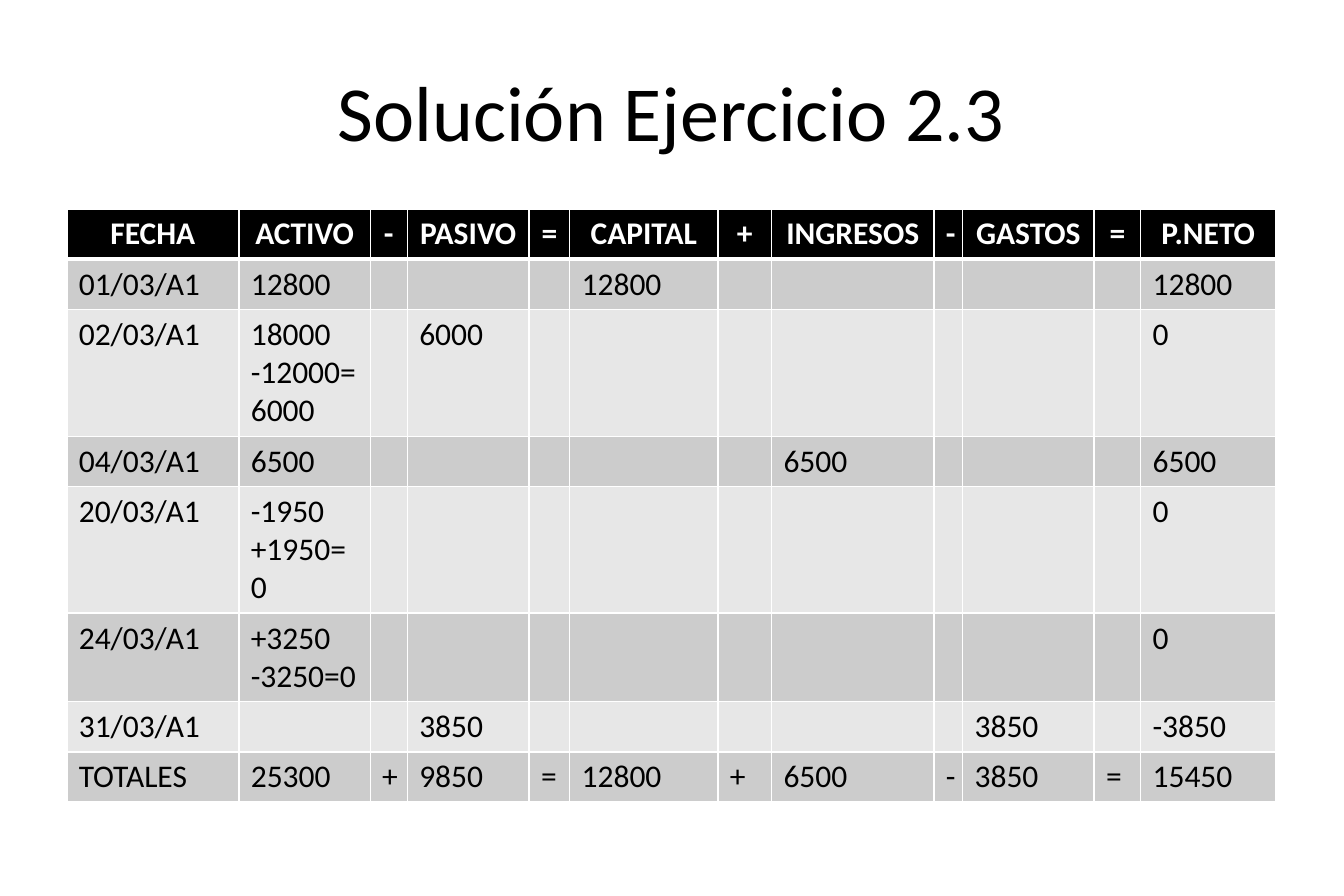
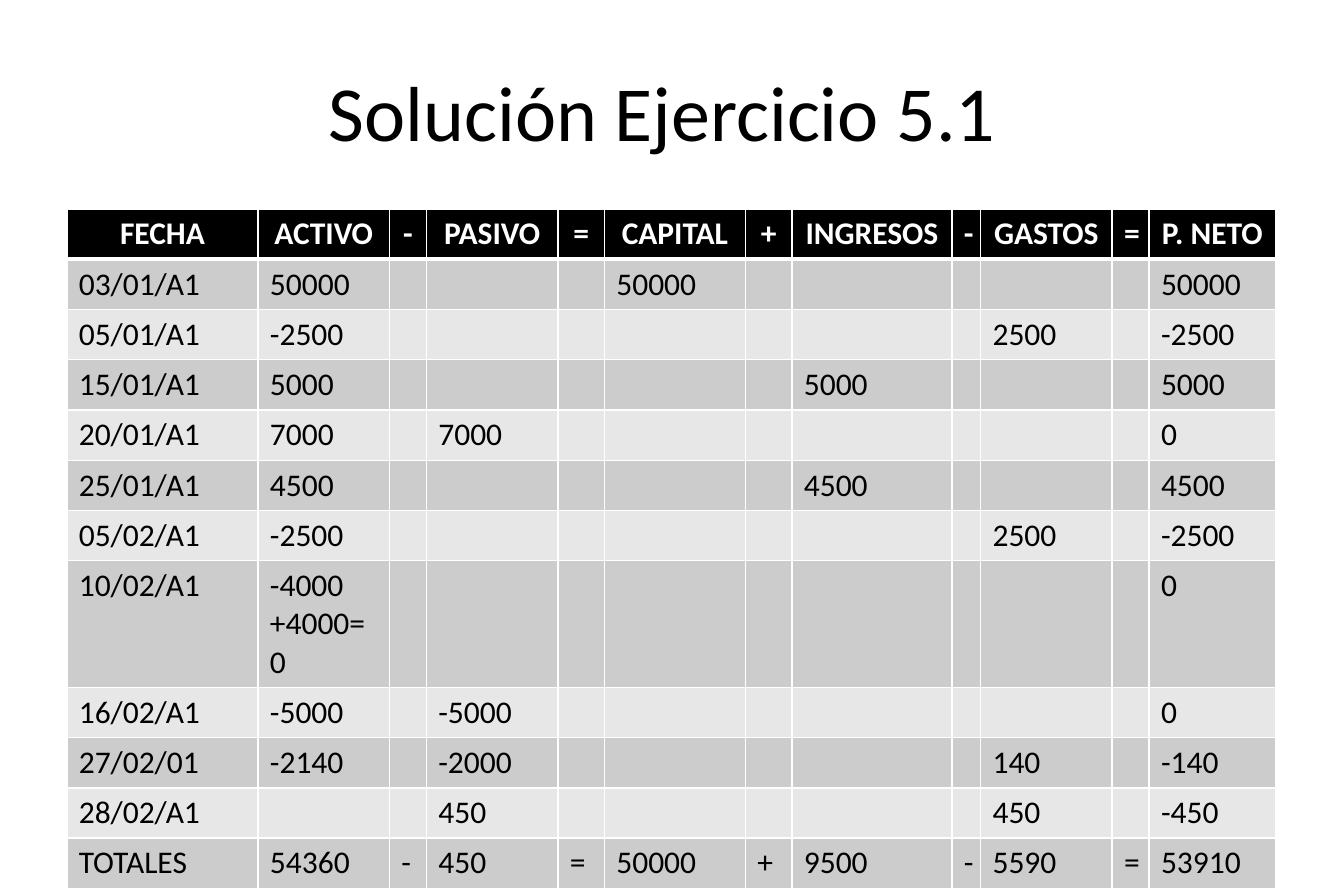
import pptx
import pptx.util
import pptx.dml.color
import pptx.enum.text
import pptx.oxml.ns
import lxml.etree

PX = 9144
FONT = "Calibri"
HUES = {"ink": "000000", "paper": "FFFFFF", "dark": "CCCCCC", "light": "E7E7E7"}
HEAD_BOX = (56, 30, 1012, 125)
GRID_BOX = (56, 175, 1012)
ROW = 41
LEFT = pptx.enum.text.PP_ALIGN.LEFT
MID = pptx.enum.text.PP_ALIGN.CENTER

HEADS = ["FECHA", "ACTIVO", "PASIVO", "CAPITAL", "INGRESOS", "GASTOS"]
DECK = [
    {
        "title": "Solución Ejercicio 2.3",
        "cols": [144, 110, 31, 102, 34, 124, 45, 136, 24, 110, 39, 113],
        "neto": "P.NETO",
        "rows": [
            ["01/03/A1", "12800", "", "12800", "", "", "12800"],
            ["02/03/A1", "18000\n-12000=\n6000", "6000", "", "", "", "0"],
            ["04/03/A1", "6500", "", "", "6500", "", "6500"],
            ["20/03/A1", "-1950\n+1950=0", "", "", "", "", "0"],
            ["24/03/A1", "+3250\n-3250=0", "", "", "", "", "0"],
            ["31/03/A1", "", "3850", "", "", "3850", "-3850"],
        ],
        "total": ["TOTALES", "25300", "9850", "12800", "6500", "3850", "15450"],
        "signs": "+=+-=",
    },
    {
        "title": "Solución Ejercicio 5.1 ",
        "cols": [160, 110, 31, 110, 39, 118, 39, 134, 24, 110, 31, 106],
        "neto": "P. NETO",
        "rows": [
            ["03/01/A1", "50000", "", "50000", "", "", "50000"],
            ["05/01/A1", "-2500", "", "", "", "2500", "-2500"],
            ["15/01/A1", "5000", "", "", "5000", "", "5000"],
            ["20/01/A1", "7000", "7000", "", "", "", "0"],
            ["25/01/A1", "4500", "", "", "4500", "", "4500"],
            ["05/02/A1", "-2500", "", "", "", "2500", "-2500"],
            ["10/02/A1", "-4000\n+4000=0", "", "", "", "", "0"],
            ["16/02/A1", "-5000", "-5000", "", "", "", "0"],
            ["27/02/01", "-2140", "-2000", "", "", "140", "-140"],
            ["28/02/A1", "", "450", "", "", "450", "-450"],
        ],
        "total": ["TOTALES", "54360", "450", "50000", "9500", "5590", "53910"],
        "signs": "-=+-=",
    },
]


def tint(name):
    return pptx.dml.color.RGBColor.from_string(HUES[name])


def write(frame, text, size=19, hue="ink", bold=False, align=LEFT):
    frame.text = text
    for para in frame.paragraphs:
        para.alignment = align
        for run in para.runs:
            run.font.name = FONT
            run.font.size = pptx.util.Pt(size)
            run.font.bold = bold
            run.font.color.rgb = tint(hue)


def edge(cell, side, width):
    qn = pptx.oxml.ns.qn
    line = lxml.etree.SubElement(
        cell._tc.get_or_add_tcPr(), qn("a:ln" + side), w=str(pptx.util.Pt(width))
    )
    fill = lxml.etree.SubElement(line, qn("a:solidFill"))
    lxml.etree.SubElement(fill, qn("a:srgbClr"), val=HUES["paper"])


def weave(vals, signs):
    line = list(vals[:2])
    for sign, val in zip(signs, vals[2:]):
        line += [sign, val]
    return line


def add_head(slide, box, text):
    head = slide.shapes.title
    head.left, head.top, head.width, head.height = [n * PX for n in box]
    frame = head.text_frame
    frame.auto_size = pptx.enum.text.MSO_AUTO_SIZE.NONE
    frame.vertical_anchor = pptx.enum.text.MSO_ANCHOR.MIDDLE
    frame.margin_left = frame.margin_right = 11 * PX
    frame.margin_top = frame.margin_bottom = 5 * PX
    write(frame, text, size=47, align=MID)


def add_grid(slide, box, cols, lines):
    x, y, width = box
    frame = slide.shapes.add_table(
        len(lines), len(cols), x * PX, y * PX, width * PX, len(lines) * ROW * PX
    )
    table = frame.table
    table.first_row = table.horz_banding = False
    for col, wide in zip(table.columns, cols):
        col.width = wide * PX
    for r, line in enumerate(lines):
        table.rows[r].height = ROW * PX
        top = r == 0
        hue = "ink" if top else "dark" if r % 2 else "light"
        for c, text in enumerate(line):
            cell = table.cell(r, c)
            for side in "LRTB":
                thick = (r, side) in ((0, "B"), (1, "T"))
                edge(cell, side, 3 if thick else 1)
            cell.fill.solid()
            cell.fill.fore_color.rgb = tint(hue)
            if text and top:
                write(cell.text_frame, text, hue="paper", bold=True, align=MID)
            elif text:
                write(cell.text_frame, text)


def add_page(deck, page):
    slide = deck.slides.add_slide(deck.slide_layouts[5])
    add_head(slide, HEAD_BOX, page["title"])
    lines = [weave(HEADS + [page["neto"]], "-=+-=")]
    lines += [weave(vals, [""] * 5) for vals in page["rows"]]
    lines.append(weave(page["total"], page["signs"]))
    add_grid(slide, GRID_BOX, page["cols"], lines)


def main():
    deck = pptx.Presentation()
    deck.slide_width = 1125 * PX
    deck.slide_height = 750 * PX
    for page in DECK:
        add_page(deck, page)
    deck.save("out.pptx")


if __name__ == "__main__":
    main()
